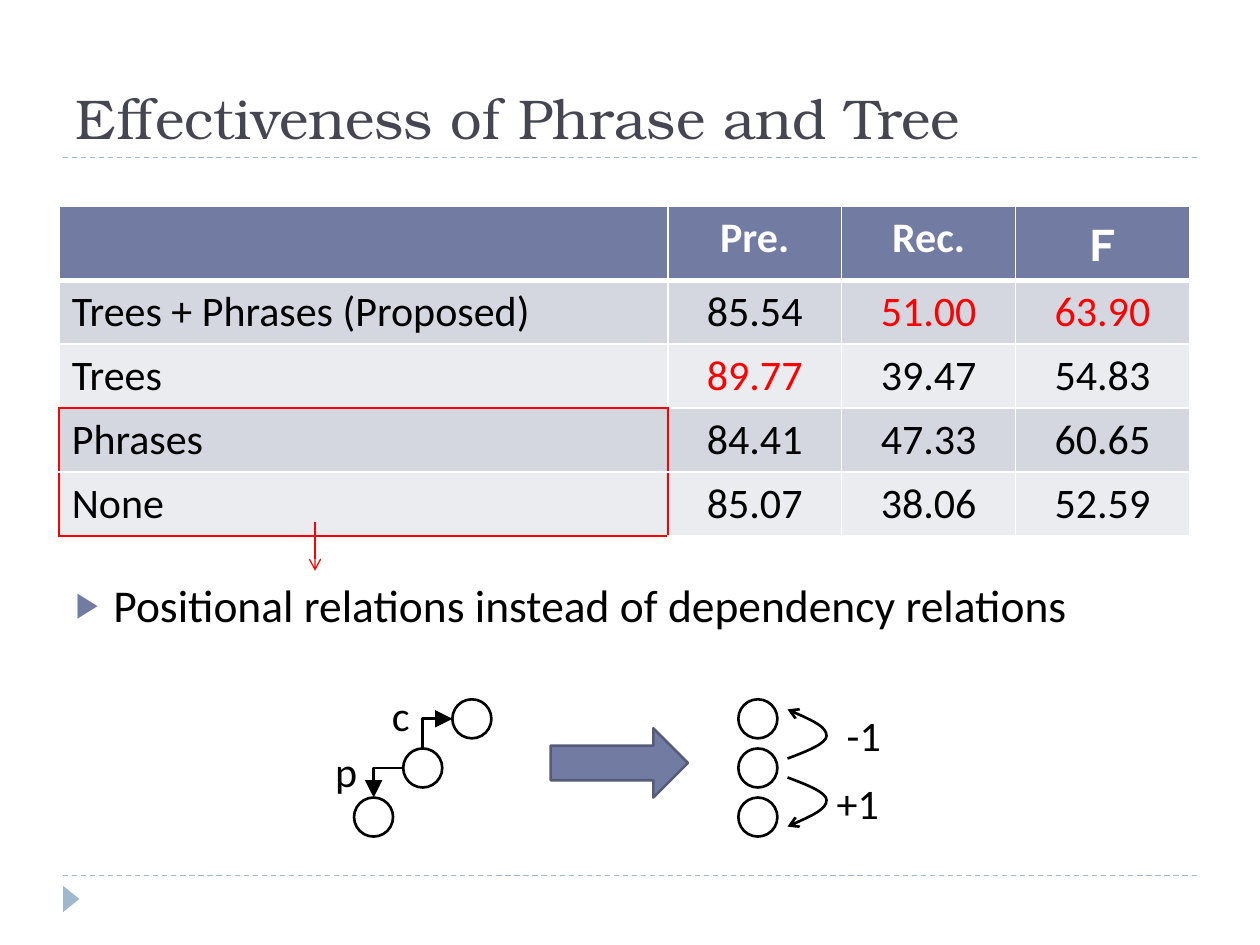
from lxml import etree
from pptx import Presentation, util as u
from pptx.dml.color import RGBColor
from pptx.enum import dml, shapes, text
from pptx.oxml.ns import qn

# Content
TITLE = "Effectiveness of Phrase and Tree"
RESULTS = [
    ("", "Pre.", "Rec.", "Ｆ"),
    ("Trees + Phrases (Proposed)", "85.54", "51.00", "63.90"),
    ("Trees", "89.77", "39.47", "54.83"),
    ("Phrases", "84.41", "47.33", "60.65"),
    ("None", "85.07", "38.06", "52.59"),
]
BEST = {(1, 2), (1, 3), (2, 1)}
RED_EDGES = {(2, 0): "B", (3, 0): "LTR", (4, 0): "LRB", (3, 1): "L", (4, 1): "L"}
FINDING = "Positional relations instead of dependency relations"
LABELS = [("c", 3.11, 5.47, 0.17), ("p", 2.66, 5.92, 0.21),
          ("-1", 6.72, 5.63, 0.36), ("+1", 6.64, 6.17, 0.48)]

# Format
COLORS = {"title": "464653", "ink": "000000", "white": "FFFFFF", "red": "FF0000",
          "accent": "727CA3", "accent_edge": "545C79", "rule": "9FB8CD",
          "odd": "D5D7E0", "even": "EBECF0"}
BODY_FONT, TITLE_FONT = "Calibri", "TeX Gyre Bonum"
WIDTH, HEIGHT, MARGIN = 10, 7.5, 0.5
COLUMNS, ROW = (4.83, 1.38, 1.38, 1.38), 0.41
NODE, STEP = 0.31, 0.39
TREE_X, CHAIN_X, NODES_Y = 2.81, 5.86, 5.55


def rgb(name):
    return RGBColor.from_string(COLORS[name])


def inches(*values):
    return [u.Inches(v) for v in values]


def write(frame, words, size, color="ink", font=BODY_FONT, bold=False, **layout):
    for key, value in layout.items():
        setattr(frame, key, value)
    para = frame.paragraphs[0]
    run = para.add_run()
    run.text = words
    for key, value in {"size": u.Pt(size), "name": font, "bold": bold}.items():
        setattr(run.font, key, value)
    run.font.color.rgb = rgb(color)
    return para


def stroke(line, color, width, **ends):
    line.color.rgb = rgb(color)
    line.width = u.Pt(width)
    for end, head in ends.items():
        size = {"w": "lg", "len": "lg"} if head == "triangle" else {}
        etree.SubElement(line._get_or_add_ln(), qn(f"a:{end}"), type=head, **size)


def connect(kind, start, end, color, width, **ends):
    link = slide.shapes.add_connector(kind, *inches(*start, *end))
    stroke(link.line, color, width, **ends)
    etree.SubElement(link.element.spPr, qn("a:effectLst"))
    return link


def shape(kind, box, fill=None, edge=None):
    item = slide.shapes.add_shape(kind, *inches(*box))
    item.shadow.inherit = False
    if fill:
        item.fill.solid()
        item.fill.fore_color.rgb = rgb(fill)
    else:
        item.fill.background()
    if edge:
        stroke(item.line, edge, 1.5)
    else:
        item.line.fill.background()
    return item


def edge_cell(cell, row, col):
    props = cell._tc.get_or_add_tcPr()
    for side in "LRTB":
        red = side in RED_EDGES.get((row, col), "")
        width = 3 if row == 0 and side == "B" else 1
        ln = etree.SubElement(props, qn(f"a:ln{side}"), w=str(u.Pt(width)))
        solid = etree.SubElement(ln, qn("a:solidFill"))
        etree.SubElement(solid, qn("a:srgbClr"), val=COLORS["red" if red else "white"])


def curve(points):
    """Cubic curve: a start point, then three points per segment."""
    start, *controls = [inches(*point) for point in points]
    builder = slide.shapes.build_freeform(*start)
    builder.add_line_segments(controls, close=False)
    arc = builder.convert_to_shape()
    outline = next(arc.element.iter(qn("a:path")))
    steps = outline.findall(qn("a:lnTo"))
    for first in range(0, len(steps), 3):
        bezier = etree.SubElement(outline, qn("a:cubicBezTo"))
        for step in steps[first:first + 3]:
            bezier.append(step[0])
            outline.remove(step)
    arc.shadow.inherit = False
    arc.fill.background()
    stroke(arc.line, "ink", 1.5, tailEnd="arrow")


prs = Presentation()
prs.slide_width, prs.slide_height = inches(WIDTH, HEIGHT)
slide = prs.slides.add_slide(prs.slide_layouts[1])
title, body = slide.placeholders
STRAIGHT, ELBOW = shapes.MSO_CONNECTOR.STRAIGHT, shapes.MSO_CONNECTOR.ELBOW

# Dashed rules and corner marker
for y in (6.95, 1.25):
    rule = connect(STRAIGHT, (MARGIN, y), (WIDTH - MARGIN, y), "rule", 0.75)
    rule.line.dash_style = dml.MSO_LINE.DASH
marker = shape(shapes.MSO_SHAPE.ISOSCELES_TRIANGLE, (0.46, 7.07, 0.21, 0.13), "rule")
marker.rotation = 90

# Title and finding
for holder, box in ((title, (MARGIN, 0.17, 9, 1.08)), (body, (MARGIN, 4.53, 9.27, 2.2))):
    holder.left, holder.top, holder.width, holder.height = inches(*box)
heading = write(title.text_frame, TITLE, 32, "title", TITLE_FONT,
                vertical_anchor=text.MSO_ANCHOR.BOTTOM)
heading.alignment = text.PP_ALIGN.LEFT
finding = write(body.text_frame, FINDING, 26, vertical_anchor=text.MSO_ANCHOR.TOP)
finding.space_before = u.Pt(6)
bullet = finding._p.get_or_add_pPr()
bullet.set("marL", str(u.Inches(0.3)))
bullet.set("indent", str(u.Inches(-0.3)))
bullet_color = etree.SubElement(bullet, qn("a:buClr"))
etree.SubElement(bullet_color, qn("a:srgbClr"), val=COLORS["accent"])
etree.SubElement(bullet, qn("a:buSzPct"), val="76000")
etree.SubElement(bullet, qn("a:buChar"), char="▶")

# Results table
results = slide.shapes.add_table(len(RESULTS), len(COLUMNS),
                                 *inches(0.47, 1.64, sum(COLUMNS), 2.5))
for column, width in zip(results.table.columns, COLUMNS):
    column.width = u.Inches(width)
for r, record in enumerate(RESULTS):
    results.table.rows[r].height = u.Inches(ROW)
    for c, value in enumerate(record):
        cell = results.table.cell(r, c)
        edge_cell(cell, r, c)
        cell.fill.solid()
        cell.fill.fore_color.rgb = rgb("accent" if r == 0 else "odd" if r % 2 else "even")
        if value:
            color = "white" if r == 0 else "red" if (r, c) in BEST else "ink"
            para = write(cell.text_frame, value, 24, color, bold=r == 0)
            para.alignment = text.PP_ALIGN.CENTER if c else text.PP_ALIGN.LEFT
results.height = u.Inches(2.5)

# Tree and chain nodes
for i in range(3):
    y = NODES_Y + i * STEP
    for x in (TREE_X + (2 - i) * STEP, CHAIN_X):
        shape(shapes.MSO_SHAPE.OVAL, (x, y, NODE, NODE), edge="ink")

# Elbow arrows: up from a node, then right to the next one
for i, end in ((1, "tailEnd"), (0, "headEnd")):
    x = TREE_X + i * STEP + NODE / 2
    y = NODES_Y + (2 - i) * STEP
    reach = STEP - NODE / 2
    elbow = connect(ELBOW, (x + reach, y), (x, y - reach), "ink", 1.5, **{end: "triangle"})
    elbow.element.spPr.find(qn("a:prstGeom")).set("prst", "bentConnector2")
    elbow.element.spPr.find(qn("a:xfrm")).set("rot", str(90 * 60000))

# Curved arrows leaving the middle node of the chain
for start_y, way in ((6.17, 1), (6.02, -1)):
    offsets = [(0, 0), (0.16, 0.06), (0.31, 0.12), (0.31, 0.18),
               (0.31, 0.25), (0.16, 0.32), (0, 0.39)]
    curve([(6.25 + dx, start_y + way * dy) for dx, dy in offsets])

# Labels
for words, x, y, width in LABELS:
    label = slide.shapes.add_textbox(*inches(x, y, width, 0.4))
    write(label.text_frame, words, 24, word_wrap=False,
          auto_size=text.MSO_AUTO_SIZE.SHAPE_TO_FIT_TEXT,
          margin_left=0, margin_top=0, margin_right=0, margin_bottom=0)

# Block arrow and pointer to the finding
shape(shapes.MSO_SHAPE.RIGHT_ARROW, (4.37, 5.78, 1.09, 0.55), "accent", "accent_edge")
connect(STRAIGHT, (2.5, 4.14), (2.5, 4.53), "red", 0.75, tailEnd="arrow")

prs.save("out.pptx")
